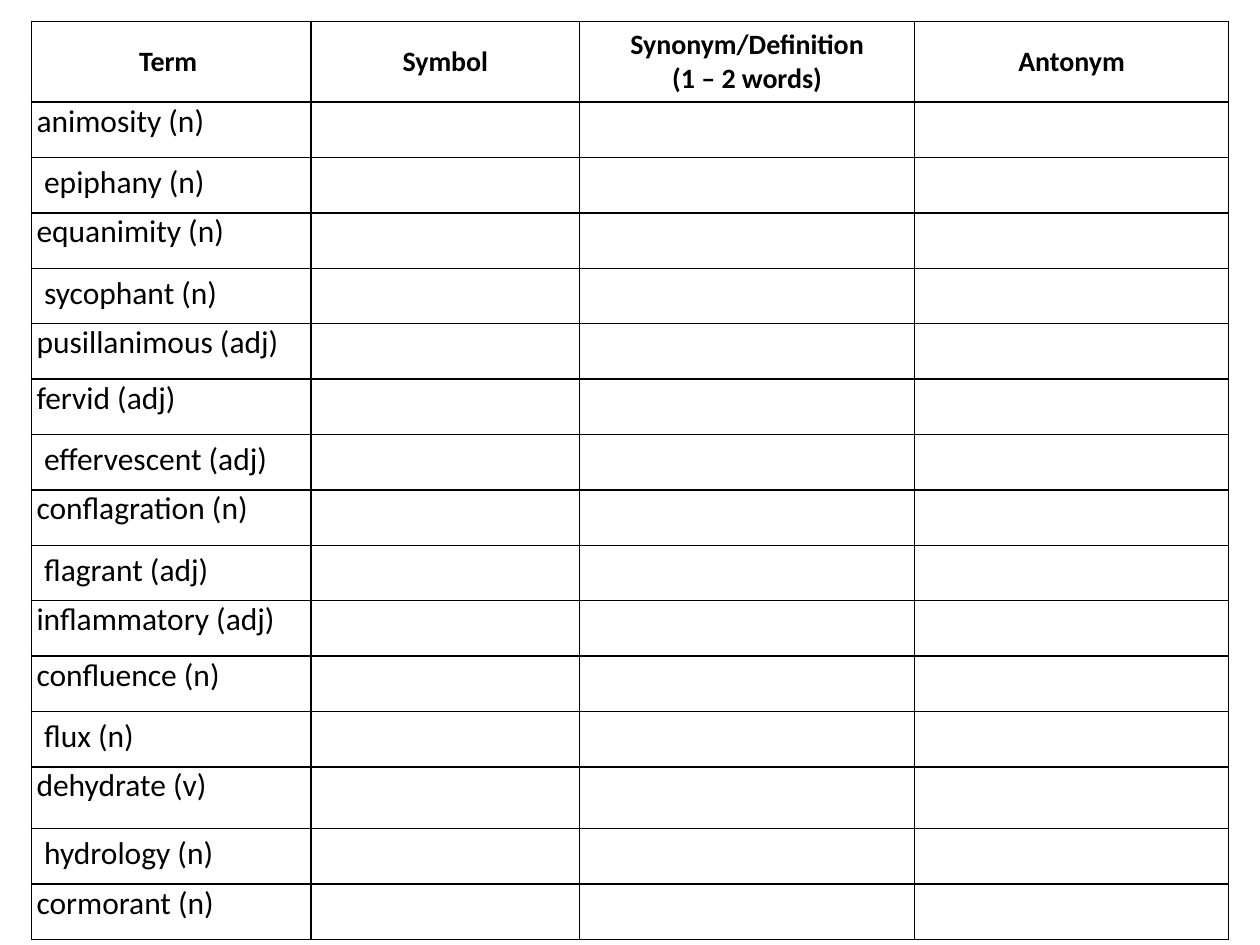
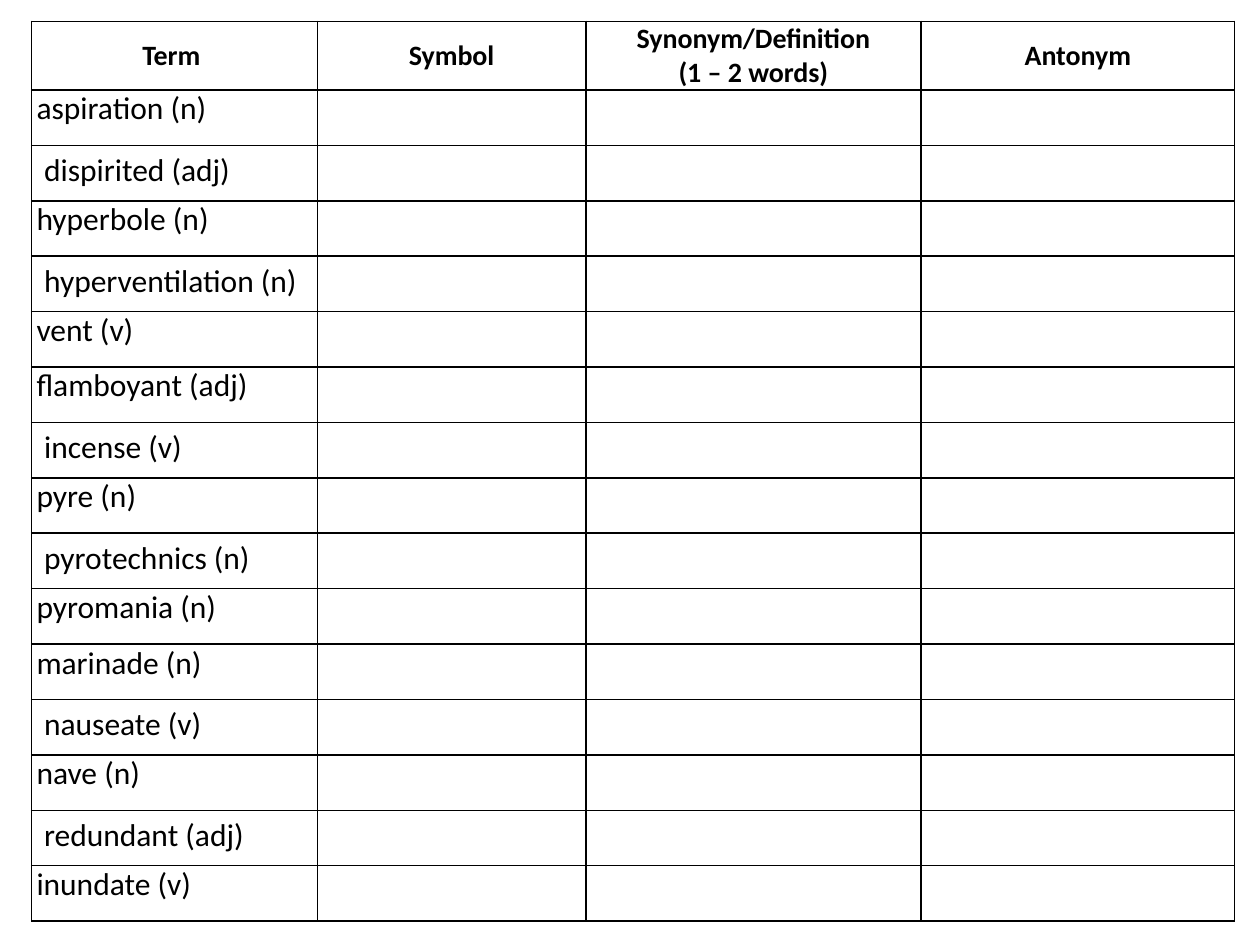
from dataclasses import dataclass

from lxml import etree
from pptx import Presentation
from pptx.dml.color import RGBColor
from pptx.enum.text import MSO_ANCHOR, PP_ALIGN
from pptx.oxml.ns import qn
from pptx.util import Inches, Pt

CENTER, LEFT = PP_ALIGN.CENTER, PP_ALIGN.LEFT
MIDDLE, TOP = MSO_ANCHOR.MIDDLE, MSO_ANCHOR.TOP
BLANK_LAYOUT = 6


@dataclass(frozen=True)
class Theme:
    font: str = "Calibri"
    ink: str = "000000"
    header_size: int = 16
    term_size: int = 18
    border_width: int = 1
    header_inset: tuple = (0.07, 0)
    tight_inset: tuple = (0.04, 0)
    roomy_inset: tuple = (0.1, 0.05)


THEME = Theme()

# Shared worksheet layout
HEADERS = ["Term ", "Symbol", "Synonym/Definition\n(1 – 2 words)", "Antonym"]
TABLE_LEFT, TABLE_TOP = 0.25, 0.17
ANSWER_WIDTHS = [2.13, 2.66, 2.49]
TERM_HEIGHT = 0.44
ROOMY_ROWS = {2, 4, 7, 9, 12, 14}  # related words, set in from the edge

# Word lists
FIRST_TERMS = [
    "animosity (n)", "epiphany (n)", "equanimity (n)", "sycophant (n)",
    "pusillanimous (adj)", "fervid (adj)", "effervescent (adj)",
    "conflagration (n)", "flagrant (adj)", "inflammatory (adj)",
    "confluence (n)", "flux (n)", "dehydrate (v)", "hydrology (n)",
    "cormorant (n)",
]
SECOND_TERMS = [
    "aspiration (n)", "dispirited (adj)", "hyperbole (n)",
    "hyperventilation (n)", "vent (v)", "flamboyant (adj)", "incense (v)",
    "pyre (n)", "pyrotechnics (n)", "pyromania (n)", "marinade (n)",
    "nauseate (v)", "nave (n)", "redundant (adj)", "inundate (v)",
]


def style_cell(cell):
    """Give a cell a thin border on every side and no fill."""
    properties = cell._tc.get_or_add_tcPr()
    for side in ("a:lnL", "a:lnR", "a:lnT", "a:lnB"):
        line = etree.SubElement(properties, qn(side), w=str(Pt(THEME.border_width)))
        fill = etree.SubElement(line, qn("a:solidFill"))
        etree.SubElement(fill, qn("a:srgbClr"), val=THEME.ink)
    cell.fill.background()


def write_cell(cell, text, *, size, inset, bold=False, align=LEFT, anchor=TOP):
    """Write text into a cell, one paragraph a line."""
    cell.margin_left = cell.margin_right = Inches(inset[0])
    cell.margin_top = cell.margin_bottom = Inches(inset[1])
    cell.vertical_anchor = anchor
    cell.text = text
    for para in cell.text_frame.paragraphs:
        para.alignment = align
        for span in para.runs:
            span.font.name = THEME.font
            span.font.size = Pt(size)
            span.font.bold = bold
            span.font.color.rgb = RGBColor.from_string(THEME.ink)


def add_word_table(page, terms, *, term_width, header_height, height, taller_rows=None):
    """Add a worksheet table: a header row, then one row for each term."""
    widths = [term_width, *ANSWER_WIDTHS]
    frame = page.shapes.add_table(
        len(terms) + 1, len(widths), Inches(TABLE_LEFT), Inches(TABLE_TOP),
        Inches(sum(widths)), Inches(height))
    table = frame.table
    table.first_row = table.horz_banding = False

    # Grid
    for column, width in zip(table.columns, widths):
        column.width = Inches(width)
    heights = {0: header_height, **(taller_rows or {})}
    for index, row in enumerate(table.rows):
        row.height = Inches(heights.get(index, TERM_HEIGHT))
    frame.height = Inches(height)
    for cell in table.iter_cells():
        style_cell(cell)

    # Text
    for column, header in enumerate(HEADERS):
        write_cell(table.cell(0, column), header, size=THEME.header_size,
                   inset=THEME.header_inset, bold=True, align=CENTER, anchor=MIDDLE)
    for row, term in enumerate(terms, start=1):
        inset = THEME.roomy_inset if row in ROOMY_ROWS else THEME.tight_inset
        write_cell(table.cell(row, 0), term, size=THEME.term_size, inset=inset)


def main():
    deck = Presentation()
    deck.slide_width, deck.slide_height = Inches(10), Inches(7.5)
    layout = deck.slide_layouts[BLANK_LAYOUT]

    # First word list
    add_word_table(deck.slides.add_slide(layout), FIRST_TERMS, term_width=2.22,
                   header_height=0.64, height=7.3, taller_rows={13: 0.49})

    # Second word list
    add_word_table(deck.slides.add_slide(layout), SECOND_TERMS, term_width=2.27,
                   header_height=0.34, height=7.14)

    deck.save("out.pptx")


if __name__ == "__main__":
    main()
